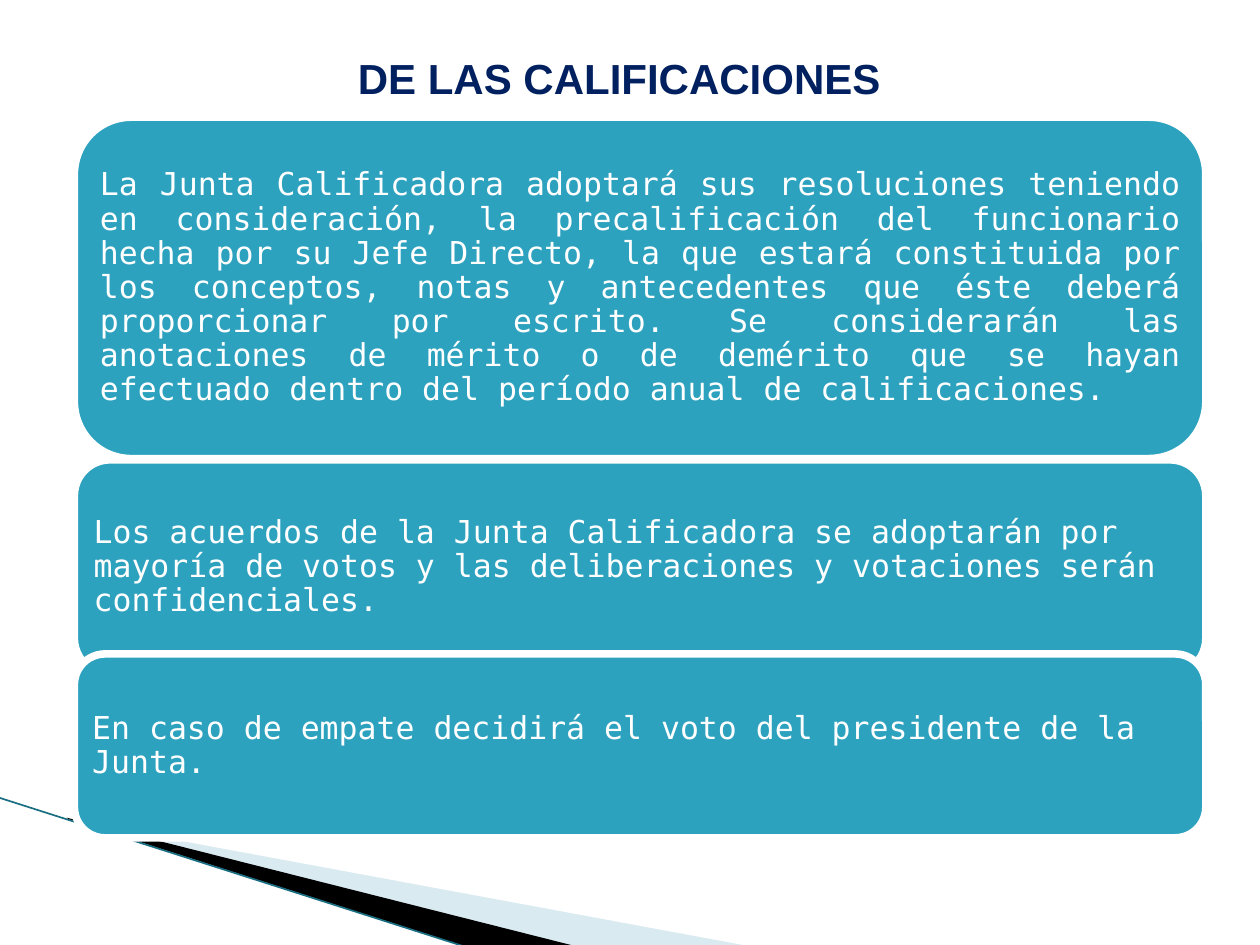
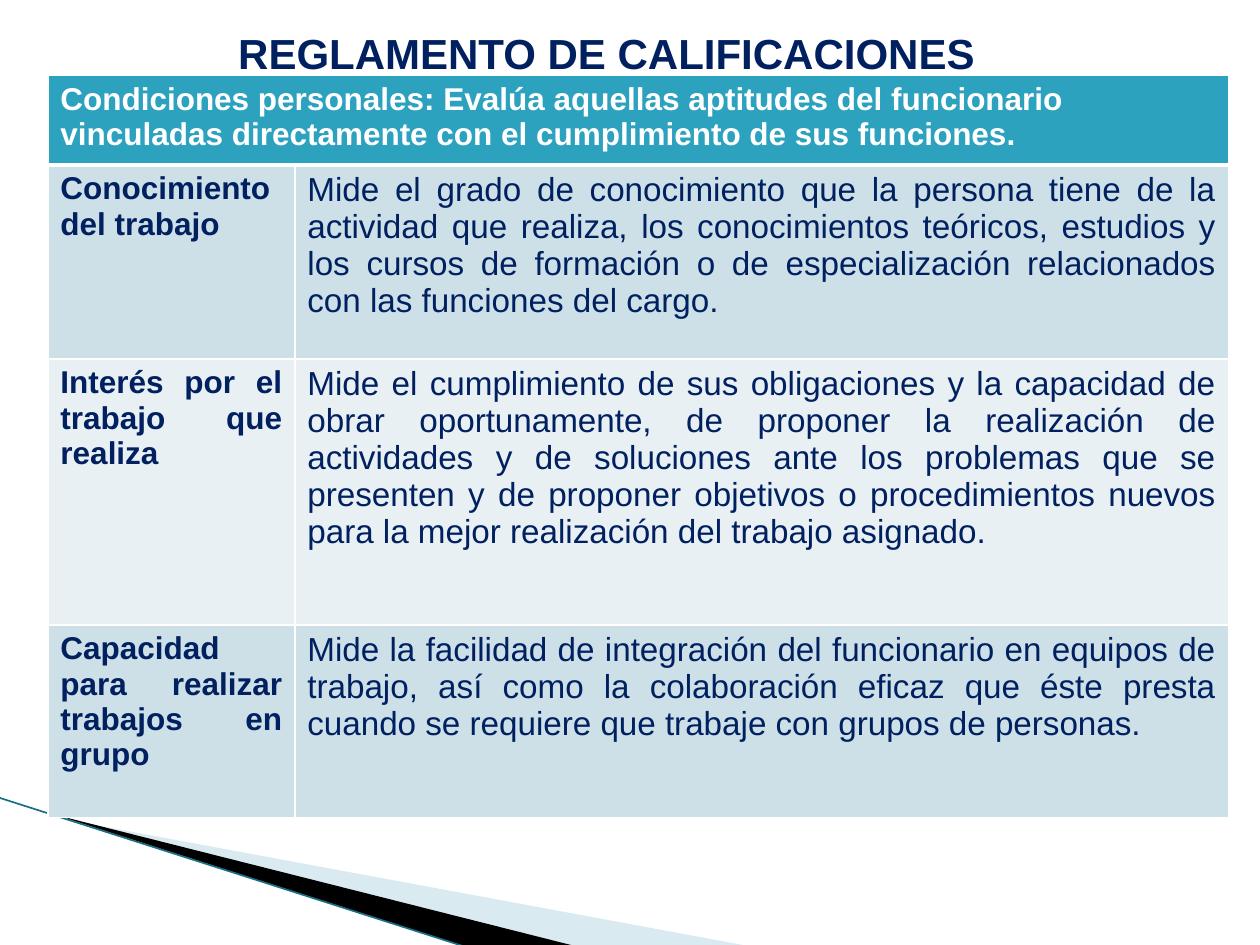
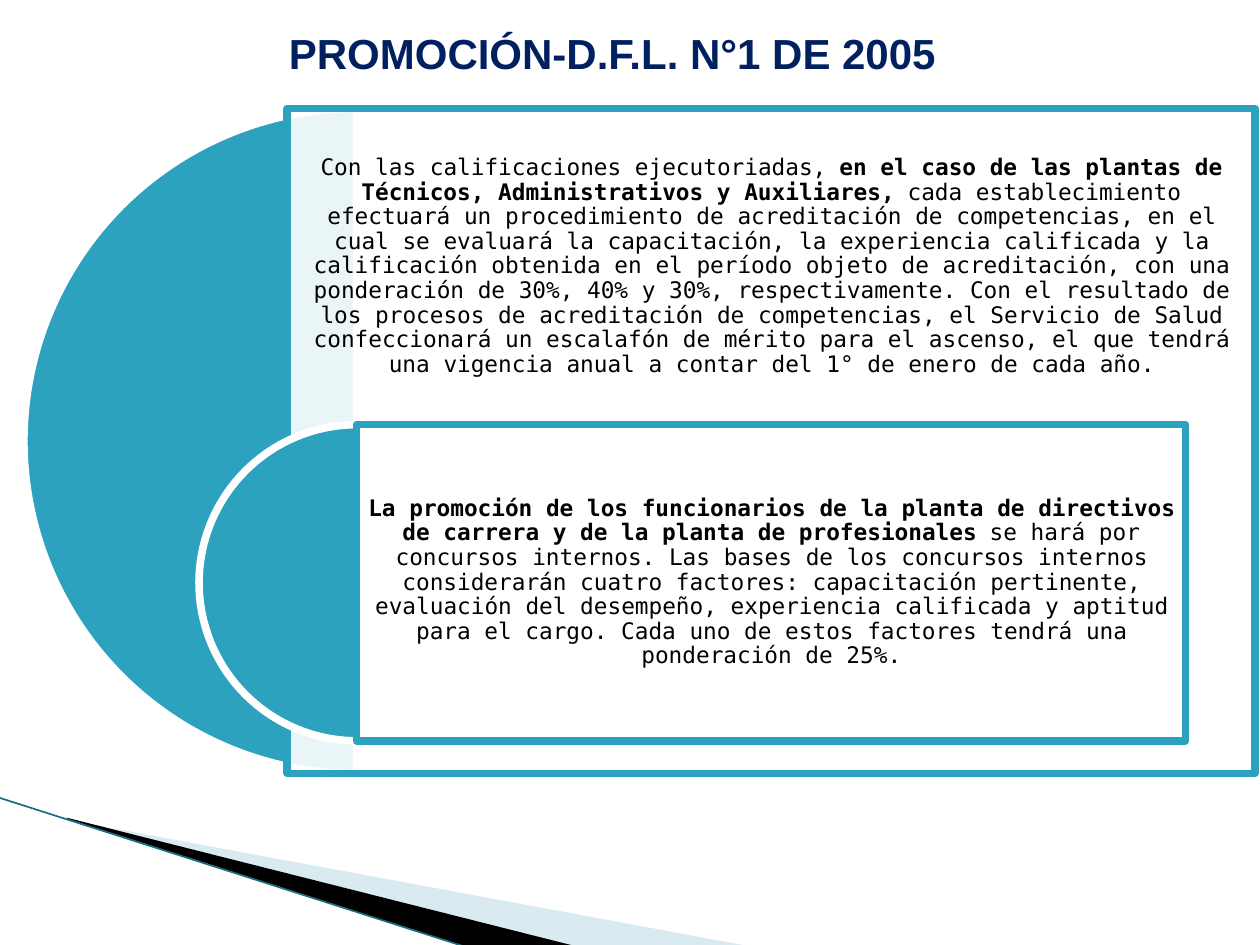
from lxml import etree
from pptx import Presentation
from pptx import util as u
from pptx.dml.color import RGBColor
from pptx.enum import shapes, text
from pptx.oxml import ns

Inches, Pt = u.Inches, u.Pt
NAVY, TEAL, WHITE, BLACK = "002060", "2DA2BF", "FFFFFF", "000000"
SANS, MONO = "Arial", "DejaVu Sans Mono"
LEFT, CENTER, JUSTIFY = text.PP_ALIGN.LEFT, text.PP_ALIGN.CENTER, text.PP_ALIGN.JUSTIFY
MIDDLE = text.MSO_ANCHOR.MIDDLE
RECT = shapes.MSO_SHAPE.RECTANGLE


def paint(shape, fill, line=None, opacity=100):
    """Set fill, outline and opacity, without shadow."""
    shape.shadow.inherit = False
    shape.fill.solid()
    shape.fill.fore_color.rgb = RGBColor.from_string(fill)
    if opacity < 100:
        color = shape.element.spPr.find(ns.qn("a:solidFill"))[0]
        etree.SubElement(color, ns.qn("a:alpha"), val=str(opacity * 1000))
    if line:
        shape.line.color.rgb = RGBColor.from_string(line)
        shape.line.width = Pt(4.33)
    else:
        shape.line.fill.background()


def write(tf, runs, font, size, color, align, spacing=None):
    """Fill the first paragraph with (words, bold) runs."""
    tf.word_wrap = True
    p = tf.paragraphs[0]
    p.alignment = align
    if spacing:
        p.line_spacing = spacing
    for words, bold in runs:
        r = p.add_run()
        r.text = words
        r.font.name, r.font.size, r.font.bold = font, Pt(size), bold
        r.font.color.rgb = RGBColor.from_string(color)


prs = Presentation()
prs.slide_width, prs.slide_height = Inches(10), Inches(7.5)
layout = prs.slide_layouts[5]

# Slides and titles
titles = [
    ("DE LAS CALIFICACIONES", (0.5, 0.3, 8.83, 0.63)),
    ("REGLAMENTO DE CALIFICACIONES ", (0, 0, 9.72, 0.84)),
    ("PROMOCIÓN-D.F.L. N°1 DE 2005", (0, 0, 9.72, 0.84)),
]
for title, box in titles:
    s = prs.slides.add_slide(layout)
    sp = s.shapes.title
    sp.left, sp.top, sp.width, sp.height = map(Inches, box)
    sp.text_frame.vertical_anchor = MIDDLE
    write(sp.text_frame, [(title, True)], SANS, 24, NAVY, CENTER)
rules_slide, conditions_slide, promotion_slide = prs.slides

# Corner band, drawn once and moved to the shared layout
wedges = [
    ([(0.55, 6.51), (5.95, 7.51), (4.56, 7.51), (0.55, 6.5)], "A0CBDC", 40),
    ([(0.53, 6.49), (4.57, 7.51), (3.72, 7.52), (0.54, 6.5)], BLACK, 100),
]
band = []
for points, color, opacity in wedges:
    start, *rest = [(Inches(x), Inches(y)) for x, y in points]
    outline = rules_slide.shapes.build_freeform(*start)
    outline.add_line_segments(rest)
    wedge = outline.convert_to_shape()
    paint(wedge, color, opacity=opacity)
    band.append(wedge)
edge = rules_slide.shapes.add_connector(
    shapes.MSO_CONNECTOR.STRAIGHT, Inches(-0.01), Inches(6.33), Inches(3.71), Inches(7.52))
edge.line.color.rgb = RGBColor.from_string("1A6E82")
edge.line.width = Pt(0.95)
etree.SubElement(edge.element.spPr, ns.qn("a:effectLst"))
for part in band + [edge]:
    layout.shapes.element.append(part.element)

# Slide 1: rules of the board
rules = [
    (0.93, 2.71, JUSTIFY,
     "La Junta Calificadora adoptará sus resoluciones teniendo en consideración, la "
     "precalificación del funcionario hecha por su Jefe Directo, la que estará constituida por "
     "los conceptos, notas y antecedentes que éste deberá proporcionar por escrito. Se "
     "considerarán las anotaciones de mérito o de demérito que se hayan efectuado dentro del "
     "período anual de calificaciones."),
    (3.65, 1.7, LEFT,
     "Los acuerdos de la Junta Calificadora se adoptarán por mayoría de votos y las "
     "deliberaciones y votaciones serán confidenciales."),
    (5.19, 1.46, LEFT,
     "En caso de empate decidirá el voto del presidente de la Junta."),
]
for top, height, align, words in rules:
    sp = rules_slide.shapes.add_shape(
        shapes.MSO_SHAPE.ROUNDED_RECTANGLE, Inches(0.59), Inches(top), Inches(8.98), Inches(height))
    paint(sp, TEAL, WHITE)
    tf = sp.text_frame
    tf.vertical_anchor = MIDDLE
    tf.margin_left = tf.margin_right = tf.margin_top = tf.margin_bottom = Inches(0.07)
    write(tf, [(words, False)], MONO, 18, WHITE, align, 0.9)

# Slide 2: table of personal conditions
conditions = [
    ("Condiciones personales: Evalúa aquellas aptitudes del funcionario vinculadas "
     "directamente con el cumplimiento de sus funciones.", ""),
    ("Conocimiento del trabajo",
     "Mide el grado de conocimiento que la persona tiene de la actividad que realiza, los "
     "conocimientos teóricos, estudios y los cursos de formación o de especialización "
     "relacionados con las funciones del cargo."),
    ("Interés por el trabajo que realiza",
     "Mide el cumplimiento de sus obligaciones y la capacidad de obrar oportunamente, de "
     "proponer la realización de actividades y de soluciones ante los problemas que se "
     "presenten y de proponer objetivos o procedimientos nuevos para la mejor realización del "
     "trabajo asignado."),
    ("Capacidad para realizar trabajos en grupo",
     "Mide la facilidad de integración del funcionario en equipos de trabajo, así como la "
     "colaboración eficaz que éste presta cuando se requiere que trabaje con grupos de "
     "personas."),
]
row_fills = [TEAL, "CDE0E8", "E8F0F4", "CDE0E8"]
table = conditions_slide.shapes.add_table(
    4, 2, Inches(0.38), Inches(0.6), Inches(9.37), Inches(5.89)).table
for column, width in zip(table.columns, (1.96, 7.41)):
    column.width = Inches(width)
for row, height in zip(table.rows, (0.71, 1.54, 2.11, 1.53)):
    row.height = Inches(height)
table.cell(0, 0).merge(table.cell(0, 1))
for i, row in enumerate(conditions):
    for j, words in enumerate(row):
        cell = table.cell(i, j)
        cell.fill.solid()
        cell.fill.fore_color.rgb = RGBColor.from_string(row_fills[i])
        if words:
            write(cell.text_frame, [(words, j == 0)], SANS, 19 if j else 18,
                  NAVY if i else WHITE, JUSTIFY if i else LEFT)
        tcPr = cell._tc.get_or_add_tcPr()
        for k, side in enumerate("LRTB"):
            thick = (i, side) in ((0, "B"), (1, "T"))
            ln = etree.Element(ns.qn("a:ln" + side), w=str(Pt(3 if thick else 1)))
            solid = etree.SubElement(ln, ns.qn("a:solidFill"))
            etree.SubElement(solid, ns.qn("a:srgbClr"), val=WHITE)
            tcPr.insert(k, ln)

# Slide 3: half discs, each with a framed text from its centre rightwards
promotions = [
    ((0.19, 0.86, 5.28), (2.28, 7.68), [
        ("Con las calificaciones ejecutoriadas, ", False),
        ("en el caso de las plantas de Técnicos, Administrativos y Auxiliares, ", True),
        ("cada establecimiento efectuará un procedimiento de acreditación de competencias, en "
         "el cual se evaluará la capacitación, la experiencia calificada y la calificación "
         "obtenida en el período objeto de acreditación, con una ponderación de 30%, 40% y 30%, "
         "respectivamente. Con el resultado de los procesos de acreditación de competencias, el "
         "Servicio de Salud confeccionará un escalafón de mérito para el ascenso, el que tendrá "
         "una vigencia anual a contar del 1° de enero de cada año.", False)]),
    ((1.58, 3.37, 2.51), (2.83, 6.58), [
        ("La promoción de los funcionarios de la planta de directivos de carrera y de la planta "
         "de profesionales ", True),
        ("se hará por concursos internos. Las bases de los concursos internos considerarán "
         "cuatro factores: capacitación pertinente, evaluación del desempeño, experiencia "
         "calificada y aptitud para el cargo. Cada uno de estos factores tendrá una ponderación "
         "de 25%.", False)]),
]
TEXT_HEIGHT = 2.51
for (left, top, size), (frame_left, frame_width), runs in promotions:
    disc = promotion_slide.shapes.add_shape(
        shapes.MSO_SHAPE.PIE, Inches(left), Inches(top), Inches(size), Inches(size))
    disc.adjustments[0], disc.adjustments[1] = 54, 162
    paint(disc, TEAL, WHITE)
    frame = promotion_slide.shapes.add_shape(
        RECT, Inches(frame_left), Inches(top), Inches(frame_width), Inches(size))
    paint(frame, WHITE, TEAL, 90)
    tf = frame.text_frame
    tf.vertical_anchor = MIDDLE
    tf.margin_left = tf.margin_right = tf.margin_top = Inches(0.05)
    tf.margin_bottom = Inches(size - TEXT_HEIGHT + 0.05)
    write(tf, runs, MONO, 13, BLACK, CENTER, 0.9)

prs.save("out.pptx")
